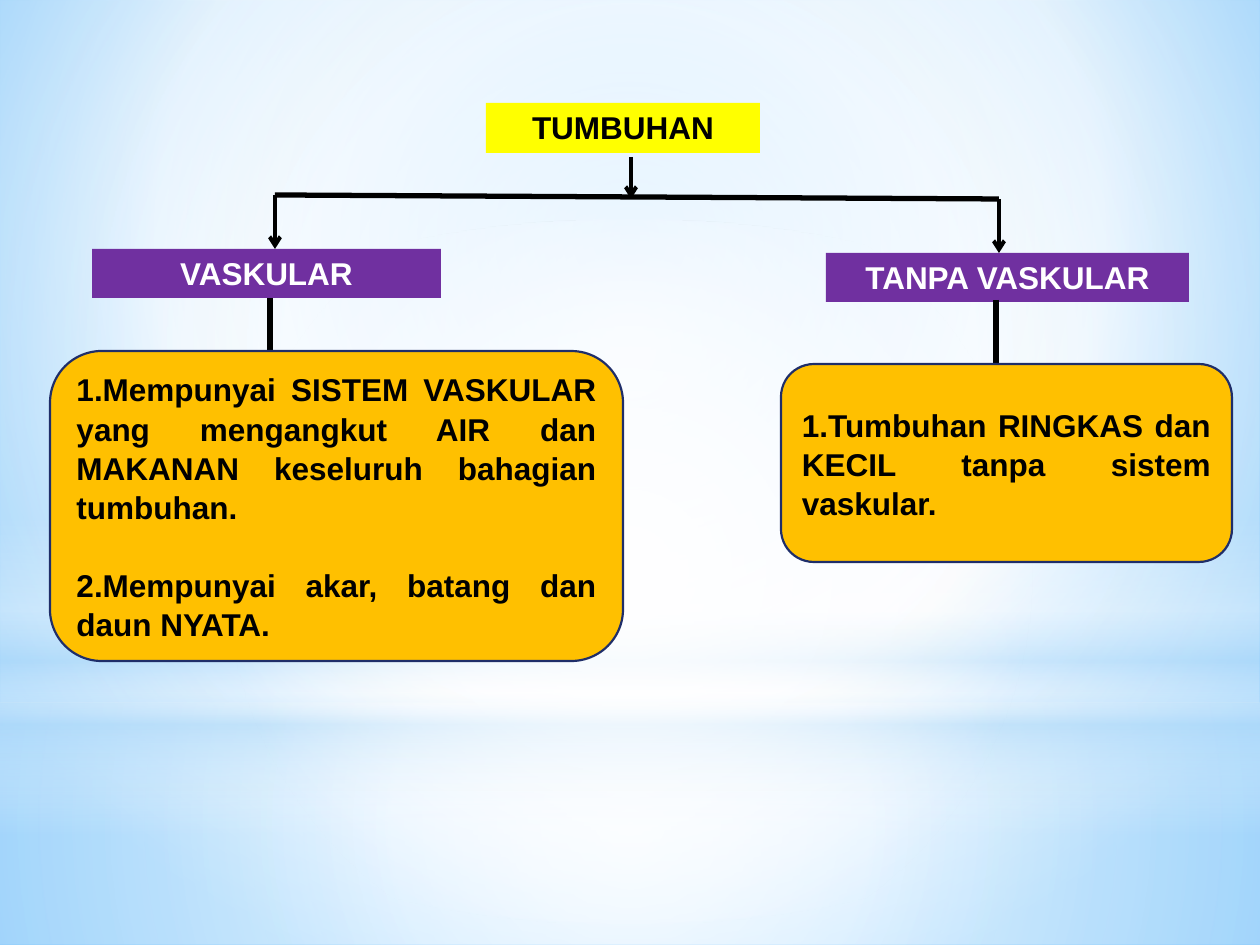
from lxml.etree import SubElement
from pptx import Presentation
from pptx.dml.color import RGBColor
from pptx.enum.shapes import MSO_CONNECTOR, MSO_SHAPE
from pptx.enum.text import MSO_ANCHOR, PP_ALIGN
from pptx.oxml.ns import qn
from pptx.util import Emu, Inches, Pt

# Content: boxes are (left, top, width, height) in px
LABELS = [
    ("TUMBUHAN", (486, 103, 274, 50), "FFFF00", "000000"),
    ("VASKULAR", (92, 249, 349, 49), "7030A0", "FFFFFF"),
    ("TANPA VASKULAR", (826, 253, 363, 49), "7030A0", "FFFFFF"),
]
CARDS = [
    (["Mempunyai SISTEM VASKULAR yang mengangkut AIR dan MAKANAN keseluruh bahagian tumbuhan.",
      "Mempunyai akar, batang dan daun NYATA."], (50, 351, 573, 310)),
    (["Tumbuhan RINGKAS dan KECIL tanpa sistem vaskular."], (781, 364, 451, 198)),
]
# Branches: start, end, width in points, arrowhead
BRANCHES = [
    ((631, 157), (631, 199), 2.25, True),
    ((275, 195), (999, 199), 3, False),
    ((275, 195), (275, 249), 2.25, True),
    ((999, 199), (999, 253), 2.25, True),
    ((270, 298), (270, 351), 3, False),
    ((996, 300), (996, 364), 3, False),
]
# Backdrop: shape, box, gradient stops (position, colour, opacity), linear angle or None
CENTRE = (50, 50, 50, 50)
SKY = [(0, "9ED5FF", 100), (60, "FFFFFF", 100), (100, "5BB9FF", 100)]
BACKDROP = [
    (MSO_SHAPE.RECTANGLE, (0, 703, 1260, 242),
     [(0, "FFFFFF", 91), (37, "FFFFFF", 76), (100, "B4DCFA", 79)], None),
    (MSO_SHAPE.RECTANGLE, (0, 0, 1260, 703),
     [(0, "FFFFFF", 89), (48, "FFFFFF", 62), (100, "B4DCFA", 79)], None),
    (MSO_SHAPE.RECTANGLE, (0, 519, 1260, 315),
     [(0, "FFFFFF", 0), (29, "FFFFFF", 30), (45, "B4DCFA", 40),
      (55, "FFFFFF", 26), (65, "B4DCFA", 60), (100, "FFFFFF", 0)], 90),
    (MSO_SHAPE.OVAL, (0, 220, 1260, 703),
     [(0, "FFFFFF", 100), (56, "FFFFFF", 0)], None),
]


def px(length):
    return Emu(round(length * 914400 / 126))


def colour(value):
    return RGBColor.from_string(value)


def set_gradient(fill, parent, stops, angle=None, focus=CENTRE):
    fill.gradient()
    gradient = next(parent.iter(qn("a:gradFill")))
    for child in list(gradient):
        gradient.remove(child)
    stop_list = SubElement(gradient, qn("a:gsLst"))
    for position, value, opacity in stops:
        stop = SubElement(stop_list, qn("a:gs"), pos=str(position * 1000))
        tint = SubElement(stop, qn("a:srgbClr"), val=value)
        if opacity < 100:
            SubElement(tint, qn("a:alpha"), val=str(opacity * 1000))
    if angle is not None:
        SubElement(gradient, qn("a:lin"), ang=str(angle * 60000), scaled="0")
    else:
        circle = SubElement(gradient, qn("a:path"), path="circle")
        SubElement(circle, qn("a:fillToRect"),
                   {side: str(part * 1000) for side, part in zip("ltrb", focus)})


def add_box(slide, preset, box, fill=None, line=None):
    shape = slide.shapes.add_shape(preset, *map(px, box))
    shape.shadow.inherit = False
    if fill:
        shape.fill.solid()
        shape.fill.fore_color.rgb = colour(fill)
    if line:
        shape.line.color.rgb = colour(line)
        shape.line.width = Pt(1.25)
    else:
        shape.line.fill.background()
    return shape


def write(shape, paragraphs, font_colour="000000", align=PP_ALIGN.CENTER,
          anchor=MSO_ANCHOR.TOP, numbered=False, spacing=1.0, gap=0):
    frame = shape.text_frame
    frame.word_wrap = True
    frame.vertical_anchor = anchor
    frame.margin_left = frame.margin_right = Inches(0.09)
    frame.margin_top = frame.margin_bottom = Inches(0.04)
    for index, text in enumerate(paragraphs):
        paragraph = frame.add_paragraph() if index else frame.paragraphs[0]
        paragraph.alignment = align
        paragraph.line_spacing = spacing
        if index:
            paragraph.space_before = Pt(gap)
        if numbered:
            SubElement(paragraph._p.get_or_add_pPr(), qn("a:buAutoNum"), type="arabicPeriod")
        run = paragraph.add_run()
        run.text = text
        for font in (paragraph.font, run.font):
            font.name = "Arial"
            font.size = Pt(18)
            font.bold = True
            font.color.rgb = colour(font_colour)


def add_branch(slide, start, end, width, arrow):
    branch = slide.shapes.add_connector(MSO_CONNECTOR.STRAIGHT, *map(px, start + end))
    branch.line.color.rgb = colour("000000")
    branch.line.width = Pt(width)
    if arrow:
        SubElement(branch.line._get_or_add_ln(), qn("a:tailEnd"), type="arrow")
    SubElement(branch._element.spPr, qn("a:effectLst"))


def main():
    deck = Presentation()
    deck.slide_width, deck.slide_height = px(1260), px(945)
    slide = deck.slides.add_slide(deck.slide_layouts[6])

    # Sky-blue background and its soft light layers
    set_gradient(slide.background.fill, slide._element, SKY, focus=(20, 10, 20, 60))
    for preset, box, stops, angle in BACKDROP:
        layer = add_box(slide, preset, box)
        set_gradient(layer.fill, layer._element, stops, angle)

    # Tree: labels, branches, then description cards
    for text, box, fill, font_colour in LABELS:
        write(add_box(slide, MSO_SHAPE.RECTANGLE, box, fill), [text], font_colour)
    for branch in BRANCHES:
        add_branch(slide, *branch)
    for points, box in CARDS:
        card = add_box(slide, MSO_SHAPE.ROUNDED_RECTANGLE, box, "FFC000", "1F2E69")
        write(card, points, align=PP_ALIGN.JUSTIFY, anchor=MSO_ANCHOR.MIDDLE,
              numbered=True, spacing=1.04, gap=22)

    deck.save("out.pptx")


if __name__ == "__main__":
    main()
